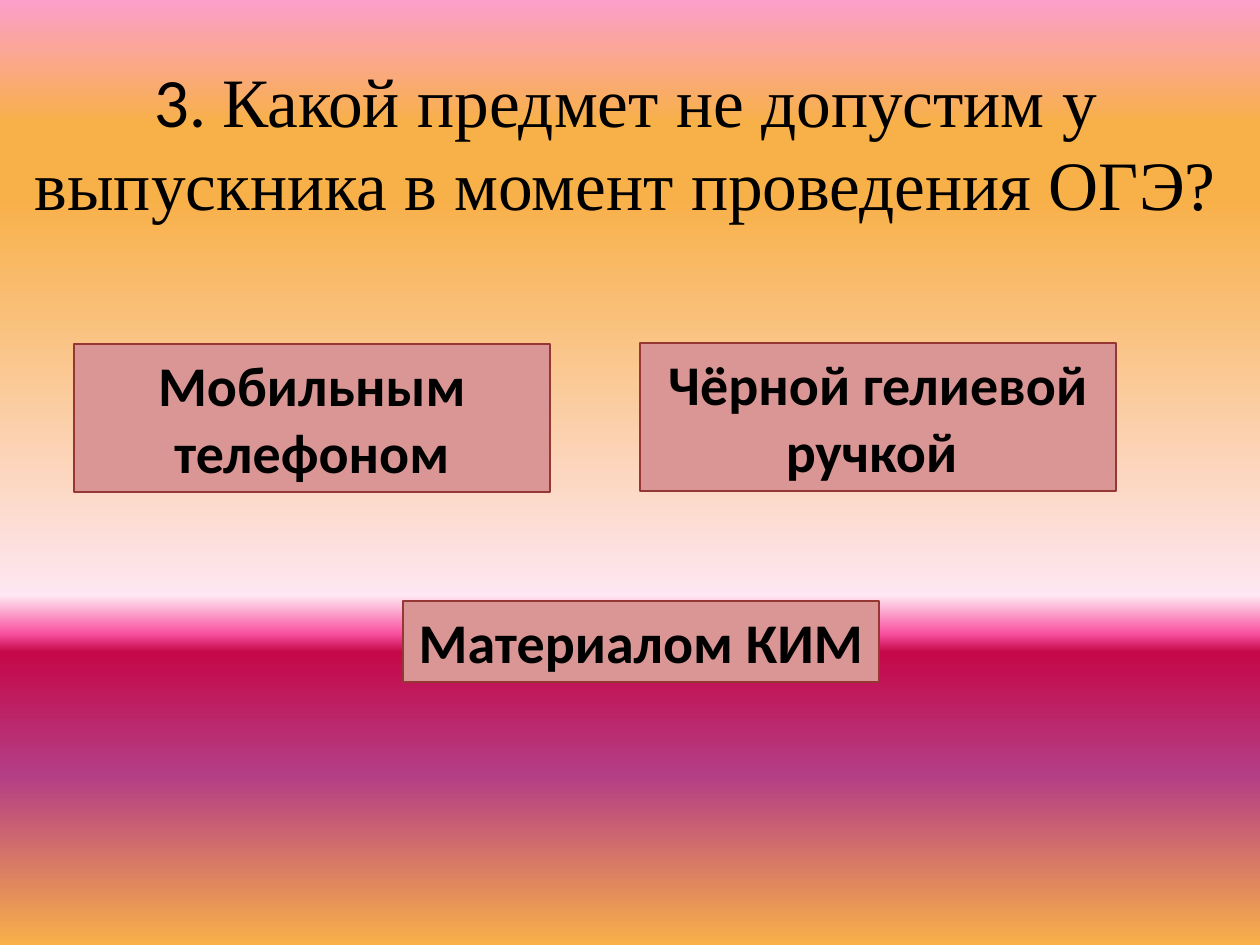
from lxml.etree import SubElement
from pptx import Presentation
from pptx.dml.color import RGBColor
from pptx.enum.shapes import MSO_SHAPE
from pptx.enum.text import MSO_ANCHOR, PP_ALIGN
from pptx.oxml.ns import qn
from pptx.util import Pt

PX = 914400 // 126
STOPS = [(0, "FC9FCB"), (13, "F8B049"), (21, "F8B049"), (63, "FEE7F2"),
         (67, "F952A0"), (69, "C50849"), (82, "B43E85"), (100, "F8B049")]
ANSWERS = [
    ("Мобильным телефоном", (74, 344, 476, 148)),
    ("Материалом КИМ", (403, 601, 476, 81)),
    ("Чёрной гелиевой ручкой ", (640, 343, 476, 148)),
]


def px(*nums):
    return [num * PX for num in nums]


def color(code):
    return RGBColor.from_string(code)


def style(run, face, size, bold=False):
    font = run.font
    font.name, font.size, font.bold = face, Pt(size), bold
    font.color.rgb = color("000000")


def backdrop(slide):
    fill = slide.background.fill
    fill.gradient()
    fill.gradient_angle = 270
    stops = next(slide.element.iter(qn("a:gsLst")))
    for stop in list(stops):
        stops.remove(stop)
    for spot, code in STOPS:
        stop = SubElement(stops, qn("a:gs"), pos=str(spot * 1000))
        SubElement(stop, qn("a:srgbClr"), val=code)


def title(slide, box):
    frame = slide.shapes.add_textbox(*px(*box)).text_frame
    frame.word_wrap = True
    frame.vertical_anchor = MSO_ANCHOR.MIDDLE
    para = frame.paragraphs[0]
    para.alignment = PP_ALIGN.CENTER
    parts = [("3. ", "Calibri"),
             ("Какой предмет не допустим у выпускника в момент проведения ОГЭ?",
              "Times New Roman")]
    for text, face in parts:
        run = para.add_run()
        run.text = text
        style(run, face, 39.6)


def answer(slide, text, box):
    shape = slide.shapes.add_shape(MSO_SHAPE.RECTANGLE, *px(*box))
    shape.shadow.inherit = False
    shape.fill.solid()
    shape.fill.fore_color.rgb = color("D99694")
    shape.line.color.rgb = color("953735")
    shape.line.width = Pt(0.75)
    frame = shape.text_frame
    frame.word_wrap = True
    frame.vertical_anchor = MSO_ANCHOR.TOP
    frame.text = text
    para = frame.paragraphs[0]
    para.alignment = PP_ALIGN.CENTER
    style(para.runs[0], "Calibri", 32, True)


def main():
    deck = Presentation()
    deck.slide_width, deck.slide_height = px(1260, 945)
    slide = deck.slides.add_slide(deck.slide_layouts[6])
    backdrop(slide)
    title(slide, (15, 38, 1221, 207))
    for text, box in ANSWERS:
        answer(slide, text, box)
    deck.save("out.pptx")


if __name__ == "__main__":
    main()
